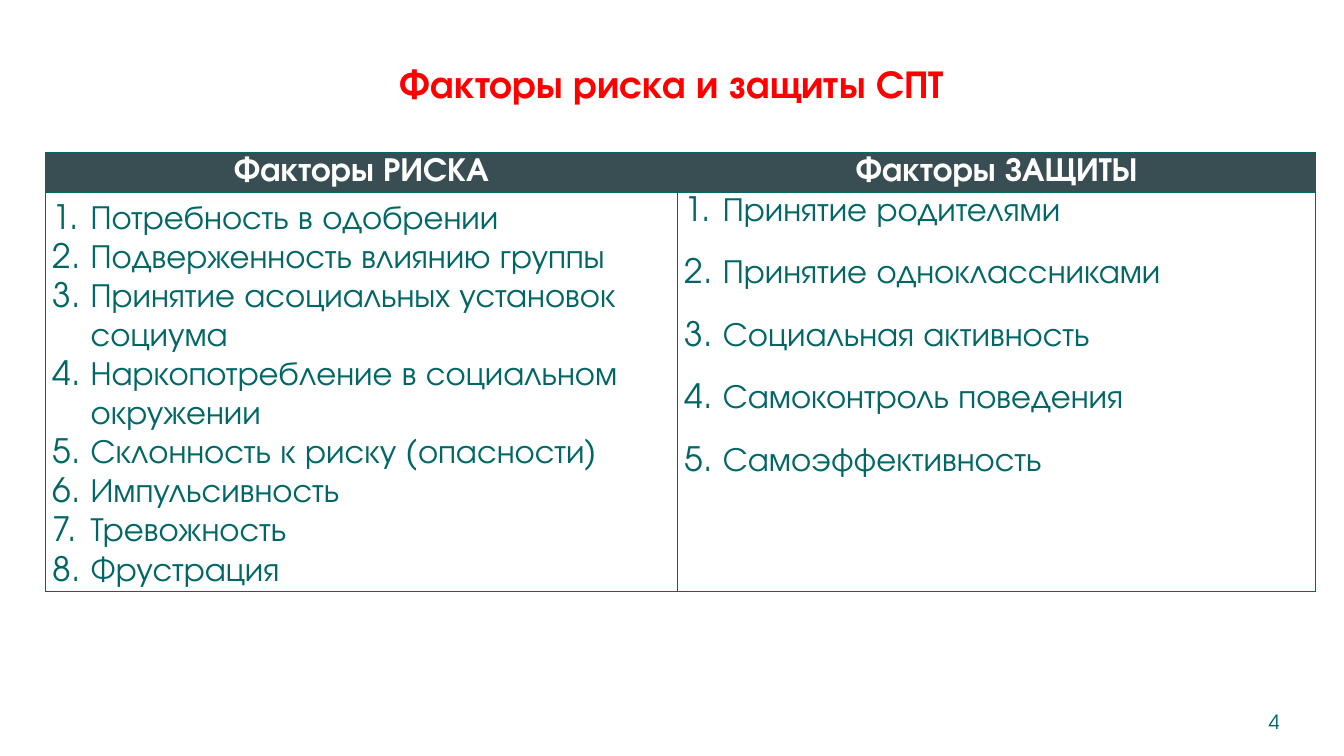
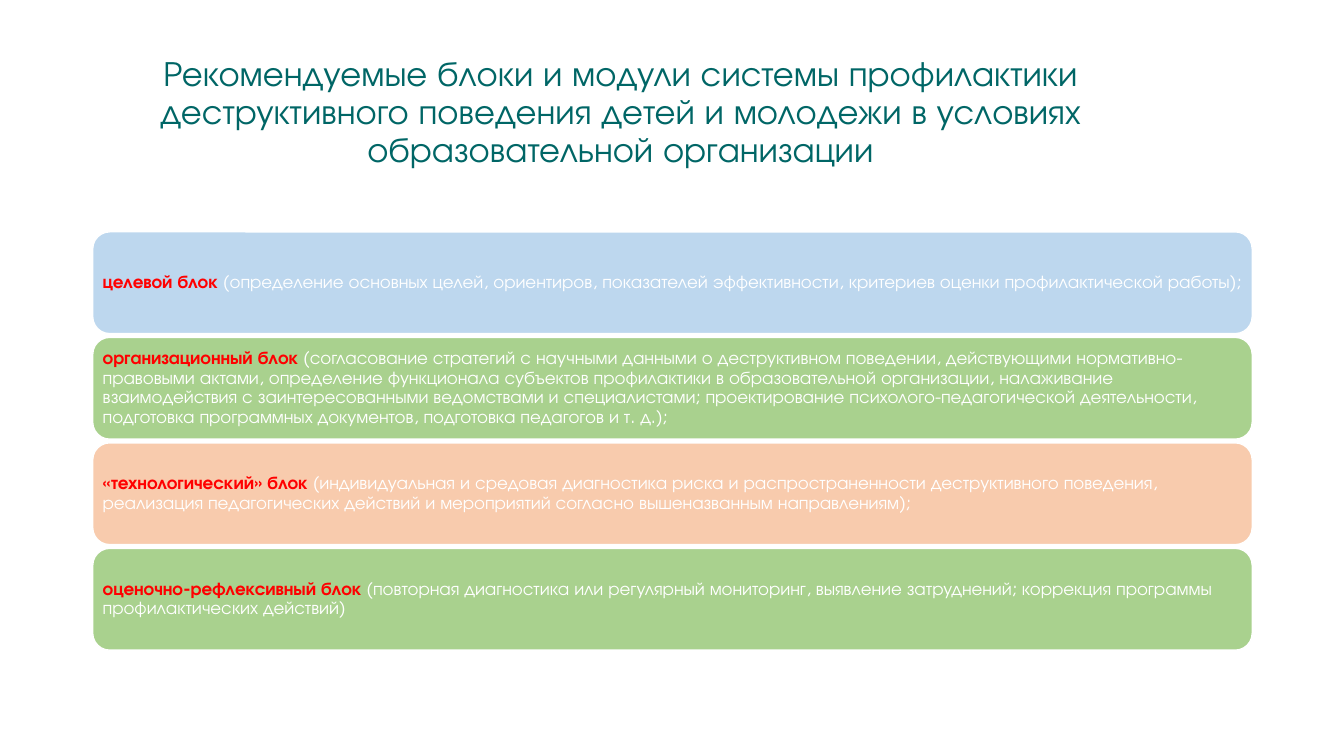
from dataclasses import dataclass

from lxml import etree
from pptx import Presentation
from pptx.dml.color import RGBColor
from pptx.enum.shapes import MSO_SHAPE
from pptx.enum.text import MSO_ANCHOR, MSO_AUTO_SIZE, PP_ALIGN
from pptx.oxml.ns import qn
from pptx.util import Inches, Pt

ROUNDED = MSO_SHAPE.ROUNDED_RECTANGLE
MIDDLE = MSO_ANCHOR.MIDDLE
NO_AUTOFIT = MSO_AUTO_SIZE.NONE
LEFT, CENTER, RIGHT = PP_ALIGN.LEFT, PP_ALIGN.CENTER, PP_ALIGN.RIGHT
TITLE_ONLY = 5


@dataclass(frozen=True)
class Theme:
    font: str = "TeX Gyre Adventor"
    teal: str = "006666"
    red: str = "FF0000"
    white: str = "FFFFFF"
    header: str = "384E52"
    blue: str = "BDD7EE"
    green: str = "A9D18E"
    peach: str = "F8CBAD"
    risk_title: float = 28
    block_title: float = 25.2
    table: float = 24
    block: float = 13
    number: float = 14
    tight: float = 0.9


THEME = Theme()

RISK_TITLE = "Факторы риска и защиты СПТ"
PAGE_NUMBER = "4"
# heading, column width, line spacing, gap between items in points, items
FACTORS = [
    ("Факторы РИСКА", 6.27, 1.25, 0, [
        "Потребность в одобрении",
        "Подверженность влиянию группы",
        "Принятие асоциальных установок социума",
        "Наркопотребление в социальном окружении",
        "Склонность к риску (опасности)",
        "Импульсивность",
        "Тревожность",
        "Фрустрация",
    ]),
    ("Факторы ЗАЩИТЫ", 6.33, 1.0, 22.3, [
        "Принятие родителями",
        "Принятие одноклассниками",
        "Социальная активность",
        "Самоконтроль поведения",
        "Самоэффективность",
    ]),
]
ROW_HEIGHTS = [0.4, 3.95]

BLOCKS_TITLE = (
    "Рекомендуемые блоки и модули системы профилактики деструктивного "
    "поведения детей и молодежи в условиях образовательной организации"
)
BLOCKS = [
    (THEME.blue, "целевой блок ",
     "(определение основных целей, ориентиров, показателей эффективности, "
     "критериев оценки профилактической работы);"),
    (THEME.green, "организационный блок ",
     "(согласование стратегий с научными данными о деструктивном поведении, "
     "действующими нормативно-правовыми актами, определение функционала "
     "субъектов профилактики в образовательной организации, налаживание "
     "взаимодействия с заинтересованными ведомствами и специалистами; "
     "проектирование психолого-педагогической деятельности, подготовка "
     "программных документов, подготовка педагогов и т. д.);"),
    (THEME.peach, "«технологический» блок ",
     "(индивидуальная и средовая диагностика риска и распространенности "
     "деструктивного поведения, реализация педагогических действий и "
     "мероприятий согласно вышеназванным направлениям);"),
    (THEME.green, "оценочно-рефлексивный блок ",
     "(повторная диагностика или регулярный мониторинг, выявление "
     "затруднений; коррекция программы профилактических действий)"),
]
BLOCK_LEFT, BLOCK_TOP, BLOCK_WIDTH, BLOCK_HEIGHT = 0.92, 2.3, 11.5, 1.01
LAST_BLOCK_TOP = 5.44


def paint(fill, color):
    fill.solid()
    fill.fore_color.rgb = RGBColor.from_string(color)


def add_span(para, text, size, color, bold=False):
    span = para.add_run()
    span.text = text
    span.font.name = THEME.font
    span.font.size = Pt(size)
    span.font.bold = bold
    span.font.color.rgb = RGBColor.from_string(color)


def set_insets(target, side, end):
    target.margin_left = target.margin_right = Inches(side)
    target.margin_top = target.margin_bottom = Inches(end)


def add_titled_page(deck, title, bounds, size, color, bold=False):
    page = deck.slides.add_slide(deck.slide_layouts[TITLE_ONLY])
    box = page.shapes.title
    box.left, box.top, box.width, box.height = map(Inches, bounds)
    frame = box.text_frame
    frame.word_wrap = True
    frame.auto_size = NO_AUTOFIT
    frame.vertical_anchor = MIDDLE
    para = frame.paragraphs[0]
    para.alignment = CENTER
    para.line_spacing = THEME.tight
    add_span(para, title, size, color, bold)
    return page


def add_numbering(para):
    properties = para._p.get_or_add_pPr()
    properties.set("marL", str(Inches(0.38)))
    properties.set("indent", str(-Inches(0.38)))
    etree.SubElement(properties, qn("a:buAutoNum"), type="arabicPeriod")


def format_cell(cell, fill):
    """Set the insets, the thin teal border on every side and the fill."""
    set_insets(cell, 0.07, 0.04)
    properties = cell._tc.get_or_add_tcPr()
    for side in ("lnL", "lnR", "lnT", "lnB"):
        line = etree.SubElement(properties, qn(f"a:{side}"), w=str(Pt(1)))
        solid = etree.SubElement(line, qn("a:solidFill"))
        etree.SubElement(solid, qn("a:srgbClr"), val=THEME.teal)
    paint(cell.fill, fill)


def add_factor_table(page):
    widths = [width for _, width, *_ in FACTORS]
    table = page.shapes.add_table(
        len(ROW_HEIGHTS), len(FACTORS), Inches(0.45), Inches(1.51),
        Inches(sum(widths)), Inches(sum(ROW_HEIGHTS))).table
    for row, height in zip(table.rows, ROW_HEIGHTS):
        row.height = Inches(height)
    for index, (heading, width, spacing, gap, items) in enumerate(FACTORS):
        table.columns[index].width = Inches(width)
        head, body = table.cell(0, index), table.cell(1, index)
        format_cell(head, THEME.header)
        format_cell(body, THEME.white)
        para = head.text_frame.paragraphs[0]
        para.alignment = CENTER
        add_span(para, heading, THEME.table, THEME.white, bold=True)
        frame = body.text_frame
        for position, item in enumerate(items):
            para = frame.add_paragraph() if position else frame.paragraphs[0]
            add_numbering(para)
            para.line_spacing = spacing
            if position and gap:
                para.space_before = Pt(gap)
            add_span(para, item, THEME.table, THEME.teal)


def add_page_number(page):
    box = page.shapes.add_textbox(
        Inches(11.23), Inches(6.98), Inches(1.56), Inches(0.36))
    frame = box.text_frame
    frame.word_wrap = True
    frame.vertical_anchor = MIDDLE
    para = frame.paragraphs[0]
    para.alignment = RIGHT
    add_span(para, PAGE_NUMBER, THEME.number, THEME.teal)


def add_block(page, top, fill, name, details):
    block = page.shapes.add_shape(
        ROUNDED, Inches(BLOCK_LEFT), Inches(top),
        Inches(BLOCK_WIDTH), Inches(BLOCK_HEIGHT))
    block.shadow.inherit = False
    paint(block.fill, fill)
    paint(block.line.fill, THEME.white)
    block.line.width = Pt(1)
    frame = block.text_frame
    frame.word_wrap = True
    frame.vertical_anchor = MIDDLE
    set_insets(frame, 0.05, 0.05)
    frame.margin_right = Inches(0.03)
    para = frame.paragraphs[0]
    para.alignment = LEFT
    para.line_spacing = THEME.tight
    add_span(para, name, THEME.block, THEME.red, bold=True)
    add_span(para, details, THEME.block, THEME.white)


def main():
    deck = Presentation()
    deck.slide_width, deck.slide_height = Inches(13.33), Inches(7.5)

    page = add_titled_page(deck, RISK_TITLE, (3.29, 0.45, 6.75, 0.81),
                           THEME.risk_title, THEME.red, bold=True)
    add_factor_table(page)
    add_page_number(page)

    page = add_titled_page(deck, BLOCKS_TITLE, (0.92, 0.4, 10.47, 1.45),
                           THEME.block_title, THEME.teal)
    step = (LAST_BLOCK_TOP - BLOCK_TOP) / (len(BLOCKS) - 1)
    for index, block in enumerate(BLOCKS):
        add_block(page, BLOCK_TOP + index * step, *block)

    deck.save("out.pptx")


if __name__ == "__main__":
    main()
